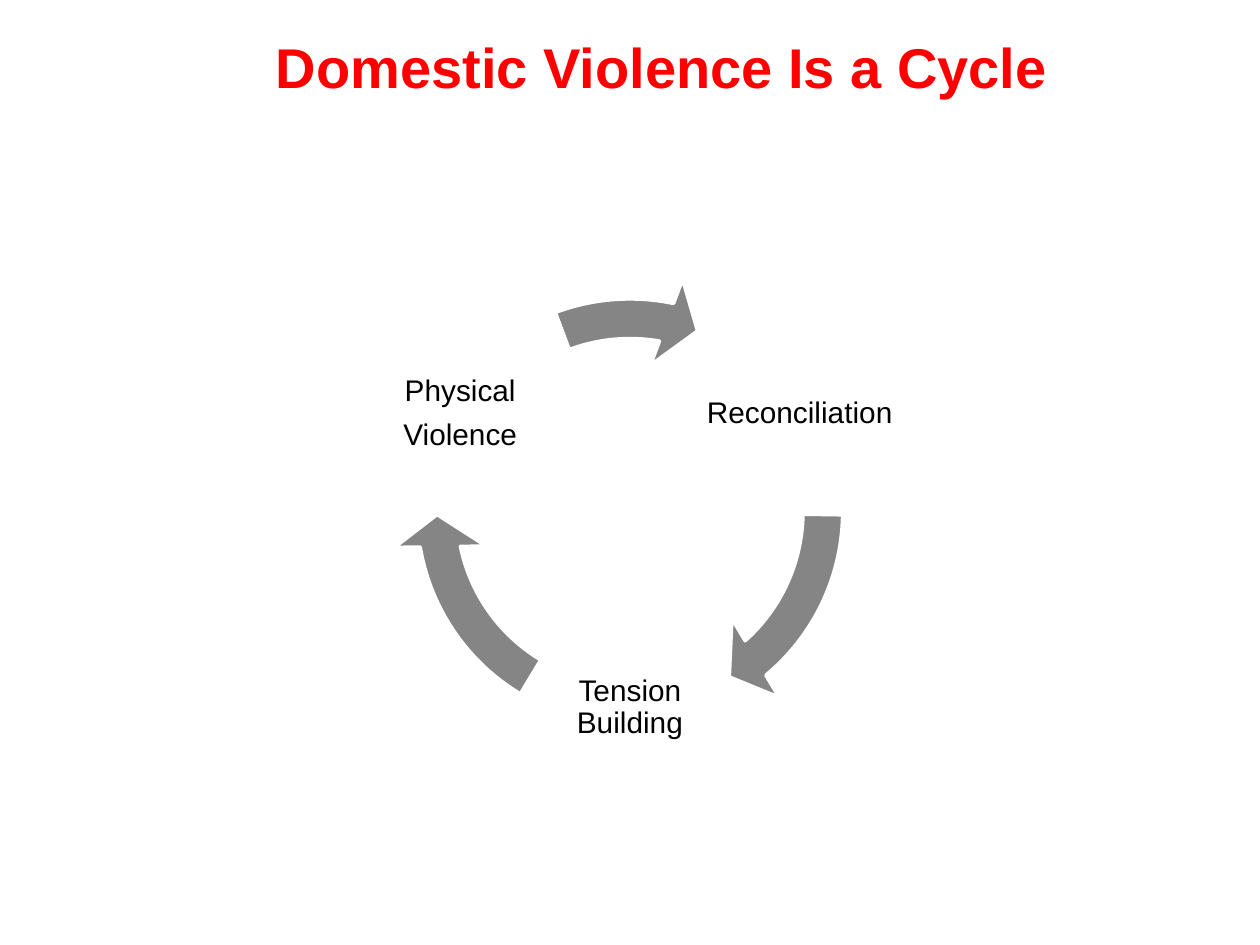
from math import cos, radians, sin

from pptx import Presentation
from pptx.dml.color import RGBColor
from pptx.enum.shapes import MSO_SHAPE
from pptx.enum.text import MSO_ANCHOR as Anchor, PP_ALIGN as Align
from pptx.util import Pt

RED = RGBColor(0xFF, 0x00, 0x00)
BLACK = RGBColor(0x00, 0x00, 0x00)
GRAY = RGBColor(0x85, 0x85, 0x85)
WHITE = RGBColor(0xFF, 0xFF, 0xFF)
FONT = "Arial"

STAGES = [
    ("Reconciliation", -30, 29.63, 0.52),
    ("Tension Building", 90, 101.71, 72.61),
    ("Physical\nViolence", 210, 168.56, 149.68),
]


def style_font(font, size, color, bold=False):
    """Apply the slide's typeface with the given size, colour and weight."""
    font.name, font.size, font.bold = FONT, Pt(size), bold
    font.color.rgb = color


def add_heading(slide, left, top, width, height):
    """Place and format the title placeholder."""
    heading = slide.shapes.title
    heading.left, heading.top = Pt(left), Pt(top)
    heading.width, heading.height = Pt(width), Pt(height)
    frame = heading.text_frame
    frame.text = "Domestic Violence Is a Cycle"
    frame.vertical_anchor = Anchor.MIDDLE
    frame.paragraphs[0].alignment = Align.LEFT
    style_font(frame.paragraphs[0].runs[0].font, 32, RED, bold=True)


def add_stage_label(shapes, stage, left, top, side):
    """Add a square text box holding one stage name."""
    frame = shapes.add_textbox(Pt(left), Pt(top), Pt(side), Pt(side)).text_frame
    frame.word_wrap = True
    frame.vertical_anchor = Anchor.MIDDLE
    frame.margin_left = frame.margin_right = Pt(1.5)
    frame.margin_top = frame.margin_bottom = Pt(1.5)
    frame.text = stage
    for paragraph in frame.paragraphs:
        paragraph.alignment = Align.CENTER
        paragraph.line_spacing = 0.9
        paragraph.space_after = Pt(7)
        style_font(paragraph.runs[0].font, 17, BLACK)


def add_arc_arrow(shapes, head_angle, tail_angle, left, top, side):
    """Add one curved arrow of the ring between two angles."""
    arrow = shapes.add_shape(
        MSO_SHAPE.CIRCULAR_ARROW, Pt(left), Pt(top), Pt(side), Pt(side))
    arrow.shadow.inherit = False
    for index, value in enumerate((0.083, 5.76, head_angle, tail_angle, 0.096)):
        arrow.adjustments[index] = value
    arrow.fill.solid()
    arrow.fill.fore_color.rgb = GRAY
    arrow.line.color.rgb = WHITE
    arrow.line.width = Pt(2)


def add_cycle(slide, left, top, side):
    """Set the stages around a ring of arrows inside a square box."""
    label_side, radius = 115.2, 112
    center_x, center_y = left + side / 2, top + side / 2
    for stage, angle, head_angle, tail_angle in STAGES:
        label_left = center_x + radius * cos(radians(angle)) - label_side / 2
        label_top = center_y + radius * sin(radians(angle)) - label_side / 2
        add_stage_label(slide.shapes, stage, label_left, label_top, label_side)
        add_arc_arrow(slide.shapes, head_angle, tail_angle, left, top, side)


def main():
    """Build the slide and save it."""
    deck = Presentation()
    deck.slide_width, deck.slide_height = Pt(720), Pt(540)
    slide = deck.slides.add_slide(deck.slide_layouts[5])
    add_heading(slide, 150.5, 9.4, 555.8, 56.9)
    add_cycle(slide, 223.6, 156, 272.8)
    deck.save("out.pptx")


if __name__ == "__main__":
    main()
